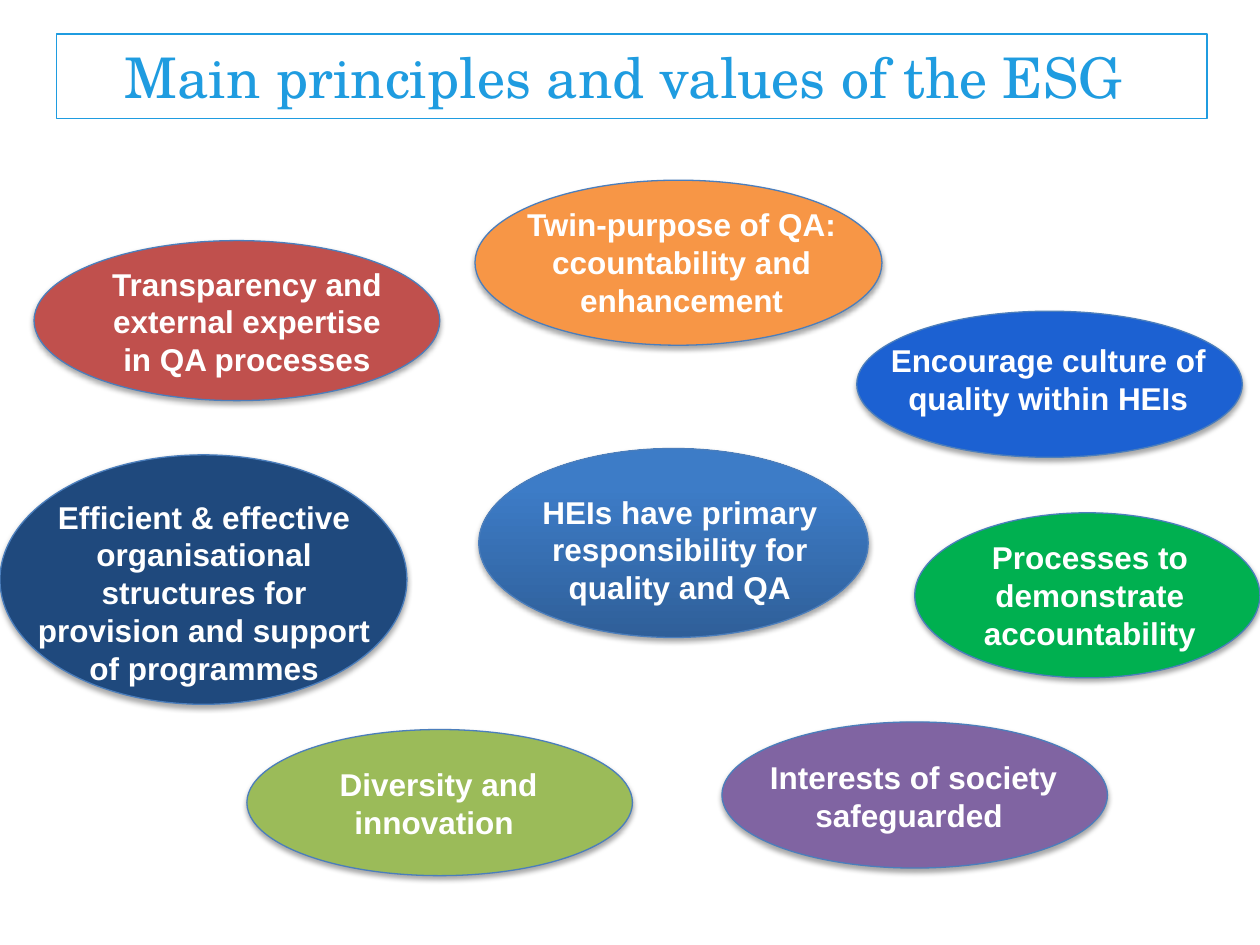
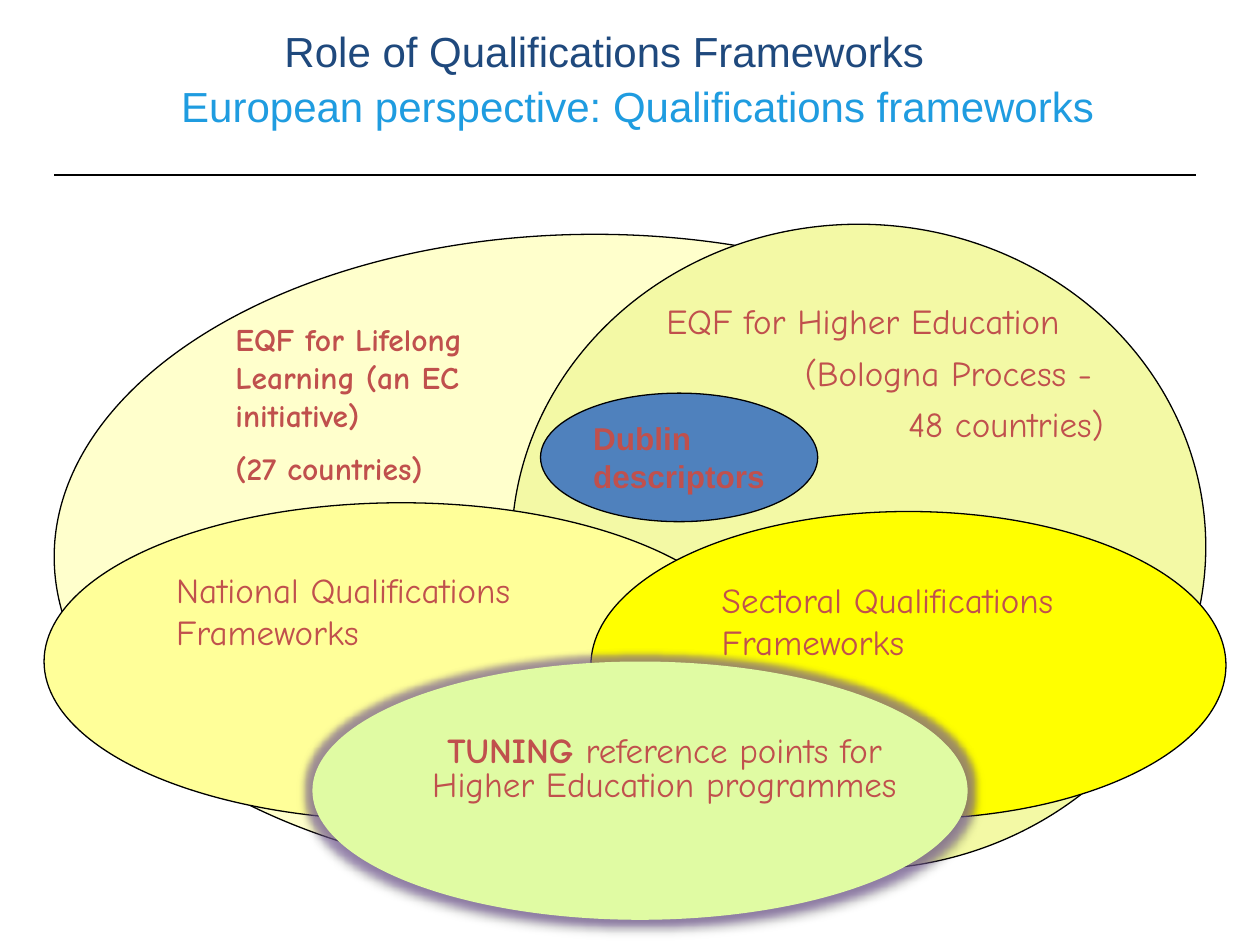
from pptx import Presentation
from pptx.dml.color import RGBColor as RGB
from pptx.enum.shapes import MSO_CONNECTOR as CONN, MSO_SHAPE as SHAPE
from pptx.enum.text import MSO_ANCHOR as ANCHOR, PP_ALIGN as AL
from pptx.oxml import parse_xml
from pptx.oxml.ns import nsdecls, qn
from pptx.util import Inches, Pt

COLORS = {
    "sky": "1F9CE0", "navy": "1F497D", "edge": "4B7EBC", "white": "FFFFFF",
    "black": "000000", "red": "C0504D", "orange": "F79646", "royal": "1C61D2",
    "green": "00B050", "olive": "9BBB59", "purple": "8064A2", "blue": "4F81BD",
    "deep": "2F5F99", "bright": "3D7CC7", "cream": "FFFFCC", "lime": "F3F9A5",
    "lemon": "FFFF99", "yellow": "FFFF00", "mint": "E0FBA3",
}
C = {name: RGB.from_string(value) for name, value in COLORS.items()}
SANS, SERIF, COMIC = "Arial", "TeX Gyre Schola", "Comic Neue"
SHADOW = (
    f'<a:outerShdw {nsdecls("a")} blurRad="39370" dist="22860" dir="5400000" rotWithShape="0">'
    '<a:srgbClr val="000000"><a:alpha val="35000"/></a:srgbClr></a:outerShdw>'
)
GLOW = (
    f'<a:glow {nsdecls("a")} rad="101600">'
    f'<a:srgbClr val="{COLORS["purple"]}"><a:alpha val="60000"/></a:srgbClr></a:glow>'
)


def add_ellipse(s, at, fill, line=None, effects=()):
    sp = s.shapes.add_shape(SHAPE.OVAL, *map(Inches, at))
    if fill == "gradient":
        sp.fill.gradient()
        sp.fill.gradient_angle = 90
        for stop, color, position in zip(sp.fill.gradient_stops, ("deep", "bright"), (0, 0.8)):
            stop.color.rgb = C[color]
            stop.position = position
    else:
        sp.fill.solid()
        sp.fill.fore_color.rgb = C[fill]
    if line:
        sp.line.color.rgb = C[line]
        sp.line.width = Pt(0.75)
    else:
        sp.line.fill.background()
    sp.shadow.inherit = False
    effect_list = sp._element.spPr.find(qn("a:effectLst"))
    for effect in effects:
        effect_list.append(parse_xml(effect))


def add_label(s, at, paragraphs, size, font, color, bold=False):
    sp = s.shapes.add_textbox(*map(Inches, at))
    tf = sp.text_frame
    tf.word_wrap = True
    for i, (text, align, spacing) in enumerate(paragraphs):
        p = tf.paragraphs[0] if i == 0 else tf.add_paragraph()
        p.text = text
        p.alignment = align
        p.line_spacing = spacing
        if i:
            p.space_before = Pt(size / 2)
        p.font.size = Pt(size)
        p.font.name = font
        p.font.color.rgb = C[color]
        p.font.bold = bold
    return sp


prs = Presentation()
prs.slide_width, prs.slide_height = Inches(10), Inches(7.5)
blank = prs.slide_layouts[6]

s = prs.slides.add_slide(blank)
title = add_label(s, (0.45, 0.27, 9.13, 0.67),
                  [("Main principles and values of the ESG ", AL.CENTER, None)], 32, SERIF, "sky")
title.text_frame.vertical_anchor = ANCHOR.MIDDLE
title.line.color.rgb = C["sky"]
title.line.width = Pt(0.75)

principles = [
    ((3.8, 3.56, 3.09, 1.5), "gradient", (4.19, 3.86, 2.41, 1.01),
     "HEIs have primary responsibility for quality and QA"),
    ((3.77, 1.43, 3.23, 1.31), "orange", (3.99, 1.58, 2.84, 1.01),
     "Twin-purpose of QA: ccountability and enhancement"),
    ((0.27, 1.91, 3.22, 1.27), "red", (0.67, 2.05, 2.58, 1.01),
     "Transparency and external expertise in QA processes"),
    ((6.8, 2.47, 3.06, 1.16), "royal", (6.8, 2.66, 3.04, 0.71),
     "Encourage culture of quality within HEIs"),
    ((7.26, 4.07, 2.74, 1.31), "green", (7.3, 4.22, 2.7, 1.01),
     "Processes to demonstrate accountability"),
    ((0, 3.61, 3.23, 1.98), "navy", (0.2, 3.9, 2.84, 1.62),
     "Efficient & effective organisational structures for provision and support of programmes"),
    ((1.96, 5.79, 3.06, 1.16), "olive", (1.96, 6.02, 3.04, 0.71),
     "Diversity and innovation "),
    ((5.73, 5.73, 3.06, 1.16), "purple", (5.73, 5.97, 3.04, 0.71),
     "Interests of society safeguarded "),
]
for oval_at, fill, text_at, text in principles:
    add_ellipse(s, oval_at, fill, "edge", [SHADOW])
    add_label(s, text_at, [(text, AL.CENTER, None)], 18, SANS, "white", True)

s = prs.slides.add_slide(blank)
frameworks = [
    ((0.43, 1.86, 8.58, 5.12), "cream", (1.77, 2.49, 2.68, 1.45), 18, COMIC, True,
     [("EQF for Lifelong Learning (an EC initiative)", AL.LEFT, None),
      ("(27 countries)", AL.LEFT, None)]),
    ((4.06, 1.78, 5.51, 5.12), "lime", (4.84, 2.33, 4.02, 1.3), 20, COMIC, False,
     [("EQF for Higher Education", AL.CENTER, None),
      ("(Bologna Process - ", AL.RIGHT, 0.8),
      ("48 countries)", AL.RIGHT, 0.8)]),
    ((0.35, 3.99, 5.67, 2.52), "lemon", (1.3, 4.46, 3.94, 0.77), 20, COMIC, False,
     [("National Qualifications Frameworks", AL.LEFT, None)]),
    ((4.69, 4.06, 5.04, 2.44), "yellow", (5.63, 4.54, 3.94, 0.77), 20, COMIC, False,
     [("Sectoral Qualifications Frameworks", AL.LEFT, None)]),
    ((4.29, 3.12, 2.2, 1.02), "blue", (4.61, 3.28, 2.05, 0.7), 18, SANS, True,
     [("Dublin descriptors", AL.LEFT, None)]),
]
for oval_at, fill, text_at, size, font, bold, paragraphs in frameworks:
    add_ellipse(s, oval_at, fill, "black")
    add_label(s, text_at, paragraphs, size, font, "red", bold)

add_ellipse(s, (2.48, 5.25, 5.2, 2.05), "mint", effects=[GLOW, SHADOW])
tuning = add_label(s, (3.03, 5.8, 4.49, 0.64), [("TUNING", AL.CENTER, 0.8)], 20, COMIC, "red")
p = tuning.text_frame.paragraphs[0]
p.runs[0].font.bold = True
r = p.add_run()
r.text = " reference points for Higher Education programmes"

add_label(s, (1.34, 0.59, 9.37, 0.5),
          [("European perspective: Qualifications frameworks", AL.LEFT, None)], 24, SANS, "sky")
add_label(s, (2.16, 0.15, 6.46, 0.51),
          [("Role of Qualifications Frameworks", AL.LEFT, None)], 24, SANS, "navy")
rule = s.shapes.add_connector(CONN.STRAIGHT, Inches(0.43), Inches(1.39), Inches(9.49), Inches(1.39))
rule.line.color.rgb = C["black"]
rule.line.width = Pt(0.75)
rule._element.spPr.append(parse_xml(f'<a:effectLst {nsdecls("a")}/>'))

prs.save("out.pptx")
